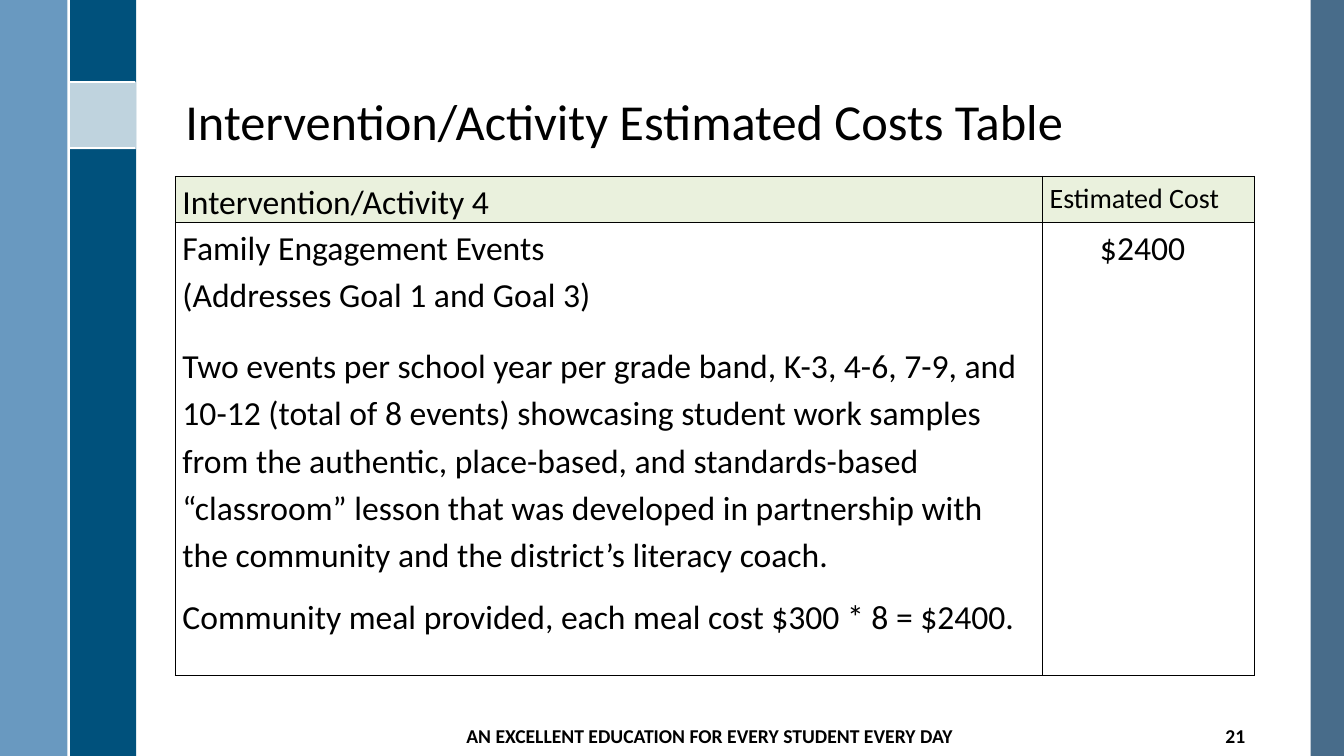
from lxml import etree
from pptx import Presentation
from pptx.dml.color import RGBColor
from pptx.enum.shapes import MSO_CONNECTOR, MSO_SHAPE
from pptx.enum.text import MSO_ANCHOR, PP_ALIGN
from pptx.oxml.ns import qn
from pptx.util import Emu, Pt

RECTANGLE = MSO_SHAPE.RECTANGLE
STRAIGHT = MSO_CONNECTOR.STRAIGHT
TOP, MIDDLE, BOTTOM = MSO_ANCHOR.TOP, MSO_ANCHOR.MIDDLE, MSO_ANCHOR.BOTTOM
LEFT, CENTER, RIGHT = PP_ALIGN.LEFT, PP_ALIGN.CENTER, PP_ALIGN.RIGHT

EMU_PER_PX = 9144  # 100 px to the inch
WIDTH, HEIGHT = 1333, 750
BLACK, WHITE, HEADER_GREEN = "000000", "FFFFFF", "EAF1DD"


def px(length):
    return Emu(length * EMU_PER_PX)


def color(hex_string):
    return RGBColor.from_string(hex_string)


def write_text(frame, text, size=24, bold=False, align=LEFT, line_spacing=1.0,
               space_before=0):
    """Add text as a paragraph, using the first one while it is empty."""
    first = frame.paragraphs[0]
    paragraph = frame.add_paragraph() if first.runs else first
    paragraph.alignment = align
    paragraph.line_spacing = line_spacing
    paragraph.space_before = Pt(space_before)
    run = paragraph.add_run()
    run.text = text
    run.font.name = "Calibri"
    run.font.size = Pt(size)
    run.font.bold = bold
    run.font.color.rgb = color(BLACK)


class SlideBuilder:
    def __init__(self, slide):
        self.slide = slide

    def band(self, left, top, width, height, fill, opacity=100):
        shape = self.slide.shapes.add_shape(
            RECTANGLE, px(left), px(top), px(width), px(height))
        shape.shadow.inherit = False
        shape.line.fill.background()
        shape.fill.solid()
        shape.fill.fore_color.rgb = color(fill)
        if opacity < 100:
            fill_color = shape.fill._xPr.find(qn("a:solidFill"))[0]
            alpha = etree.SubElement(fill_color, qn("a:alpha"))
            alpha.set("val", str(opacity * 1000))

    def line(self, x1, y1, x2, y2):
        connector = self.slide.shapes.add_connector(
            STRAIGHT, px(x1), px(y1), px(x2), px(y2))
        connector.line.color.rgb = color(WHITE)
        connector.line.width = Pt(1.5)
        etree.SubElement(connector._element.spPr, qn("a:effectLst"))

    def text_box(self, left, top, width, height, text, anchor=MIDDLE, **style):
        box = self.slide.shapes.add_textbox(
            px(left), px(top), px(width), px(height))
        frame = box.text_frame
        frame.word_wrap = True
        frame.vertical_anchor = anchor
        write_text(frame, text, **style)

    def table(self, left, top, columns, rows):
        shape = self.slide.shapes.add_table(
            len(rows), len(columns), px(left), px(top),
            px(sum(columns)), px(sum(rows)))
        table = shape.table
        table.first_row = table.horz_banding = False
        for column, width in zip(table.columns, columns):
            column.width = px(width)
        for row, height in zip(table.rows, rows):
            row.height = px(height)
        return table

    def cell(self, cell, paragraphs, fill=None, margin_left=7):
        """Fill a table cell; paragraphs are (text, format) pairs."""
        cell.margin_left, cell.margin_right = px(margin_left), px(7)
        cell.margin_top = cell.margin_bottom = 0
        cell.vertical_anchor = TOP
        properties = cell._tc.get_or_add_tcPr()
        for side in ("lnL", "lnR", "lnT", "lnB"):
            border = etree.SubElement(properties, qn(f"a:{side}"), w=str(Pt(1)))
            border_fill = etree.SubElement(border, qn("a:solidFill"))
            etree.SubElement(border_fill, qn("a:srgbClr"), val=BLACK)
        if fill:
            cell.fill.solid()
            cell.fill.fore_color.rgb = color(fill)
        else:
            cell.fill.background()
        for text, style in paragraphs:
            write_text(cell.text_frame, text, line_spacing=1.15, **style)


def main():
    presentation = Presentation()
    presentation.slide_width, presentation.slide_height = px(WIDTH), px(HEIGHT)
    builder = SlideBuilder(
        presentation.slides.add_slide(presentation.slide_layouts[6]))

    builder.band(1300, 0, 33, HEIGHT, "355D7E", opacity=90)
    builder.band(68, 0, 67, HEIGHT, "00517C")
    builder.band(0, 0, 67, HEIGHT, "558BB8", opacity=88)
    builder.band(68, 81, 67, 67, WHITE, opacity=75)
    for y in (81, 147):
        builder.line(68, y, 134, y)
    builder.line(68, 0, 68, HEIGHT)

    builder.text_box(174, 19, 1070, 136,
                     "Intervention/Activity Estimated Costs Table",
                     anchor=BOTTOM, size=36, line_spacing=0.9)
    builder.text_box(450, 710, 508, 40,
                     "AN EXCELLENT EDUCATION FOR EVERY STUDENT EVERY DAY",
                     size=14, bold=True, align=CENTER)
    builder.text_box(1178, 710, 67, 40, "21", size=14, bold=True, align=RIGHT)

    costs = builder.table(174, 175, columns=(860, 210), rows=(45, 449))
    builder.cell(costs.cell(0, 0), [("Intervention/Activity 4", {})],
                 fill=HEADER_GREEN)
    builder.cell(costs.cell(0, 1), [("Estimated Cost", {"size": 20})],
                 fill=HEADER_GREEN)
    builder.cell(costs.cell(1, 0), [
        ("Family Engagement Events", {}),
        ("(Addresses Goal 1 and Goal 3)", {}),
        ("Two events per school year per grade band, K-3, 4-6, 7-9, and 10-12 "
         "(total of 8 events) showcasing student work samples from the "
         "authentic, place-based, and standards-based “classroom” lesson that "
         "was developed in partnership with the community and the district’s "
         "literacy coach.", {"space_before": 17}),
        ("Community meal provided, each meal cost $300 * 8 = $2400.",
         {"space_before": 11}),
    ])
    builder.cell(costs.cell(1, 1), [("$2400", {})], margin_left=57)

    presentation.save("out.pptx")


if __name__ == "__main__":
    main()
